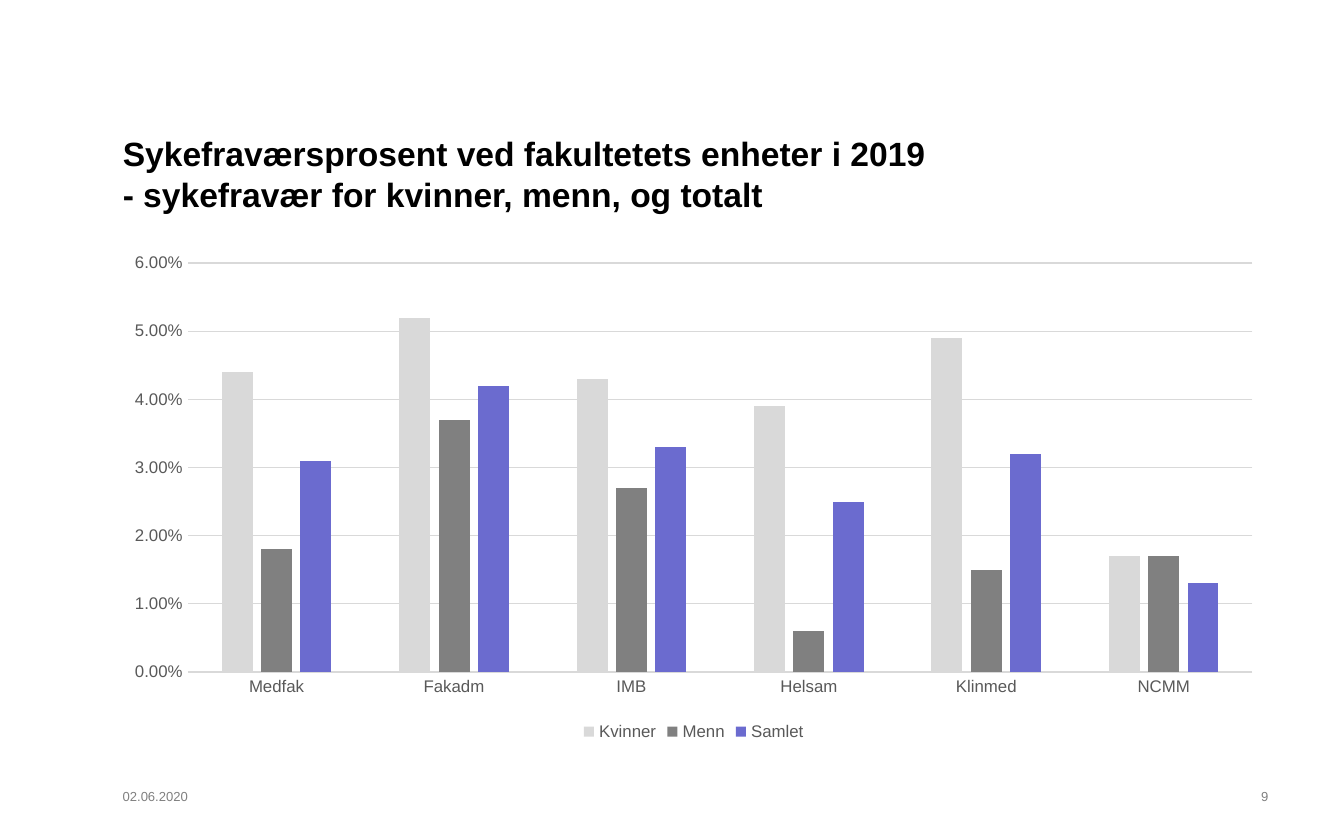
from pptx import Presentation
from pptx.chart.data import CategoryChartData
from pptx.dml.color import RGBColor
from pptx.enum import chart as ch, text
from pptx.util import Cm, Pt

FONT = "Arial"
COLORS = {
    "title": "000000",
    "footer": "808080",
    "label": "595959",
    "grid": "D9D9D9",
    "Kvinner": "D9D9D9",
    "Menn": "808080",
    "Samlet": "6B6BCF",
}
UNITS = ["Medfak", "Fakadm", "IMB", "Helsam", "Klinmed", "NCMM"]
ABSENCE = {
    "Kvinner": [0.044, 0.052, 0.043, 0.039, 0.049, 0.017],
    "Menn": [0.018, 0.037, 0.027, 0.006, 0.015, 0.017],
    "Samlet": [0.031, 0.042, 0.033, 0.025, 0.032, 0.013],
}


def color(name):
    return RGBColor.from_string(COLORS[name])


def style(font, size, color_name, bold=False):
    font.name = FONT
    font.size = Pt(size)
    font.bold = bold
    font.color.rgb = color(color_name)


def fill_frame(frame, words, size, color_name, align, anchor, bold=False):
    frame.text = words
    frame.word_wrap = True
    frame.auto_size = text.MSO_AUTO_SIZE.NONE
    frame.vertical_anchor = anchor
    frame.margin_left = frame.margin_right = Cm(0.21)
    frame.margin_top = frame.margin_bottom = Cm(0.1)
    paragraph = frame.paragraphs[0]
    paragraph.alignment = align
    for run in paragraph.runs:
        style(run.font, size, color_name, bold)


def add_heading(slide, left, top, width, height):
    heading = slide.shapes.title
    heading.left, heading.top = Cm(left), Cm(top)
    heading.width, heading.height = Cm(width), Cm(height)
    fill_frame(
        heading.text_frame,
        "Sykefraværsprosent ved fakultetets enheter i 2019\v"
        "- sykefravær for kvinner, menn, og totalt",
        18, "title", text.PP_ALIGN.LEFT, text.MSO_ANCHOR.MIDDLE, True)


def add_absence_chart(slide, left, top, width, height):
    absence = CategoryChartData(number_format="0.00%")
    absence.categories = UNITS
    for group, rates in ABSENCE.items():
        absence.add_series(group, rates)
    chart = slide.shapes.add_chart(
        ch.XL_CHART_TYPE.COLUMN_CLUSTERED,
        Cm(left), Cm(top), Cm(width), Cm(height), absence).chart
    style(chart.font, 10, "title")
    chart.has_title = False

    chart.has_legend = True
    chart.legend.position = ch.XL_LEGEND_POSITION.BOTTOM
    chart.legend.include_in_layout = False
    style(chart.legend.font, 9, "label")

    bars = chart.plots[0]
    bars.gap_width = 219
    bars.overlap = -27
    bars.vary_by_categories = False
    for series in bars.series:
        series.invert_if_negative = False
        series.format.fill.solid()
        series.format.fill.fore_color.rgb = color(series.name)

    units, rates = chart.category_axis, chart.value_axis
    for axis in (units, rates):
        axis.major_tick_mark = axis.minor_tick_mark = ch.XL_TICK_MARK.NONE
        style(axis.tick_labels.font, 9, "label")
    rates.minimum_scale, rates.maximum_scale, rates.major_unit = 0, 0.06, 0.01
    rates.tick_labels.number_format = "0.00%"
    rates.tick_labels.number_format_is_linked = False
    rates.format.line.fill.background()
    rates.has_major_gridlines = True
    for line in (units.format.line, rates.major_gridlines.format.line):
        line.color.rgb = color("grid")
        line.width = Pt(0.75)


def add_footer(slide, left, top, width, height):
    parts = [
        ("02.06.2020", 0, 5.28, text.PP_ALIGN.LEFT),
        ("9", width - 1.9, 1.9, text.PP_ALIGN.RIGHT),
    ]
    for words, offset, part_width, align in parts:
        part = slide.shapes.add_textbox(
            Cm(left + offset), Cm(top), Cm(part_width), Cm(height))
        fill_frame(part.text_frame, words, 7, "footer", align,
                   text.MSO_ANCHOR.TOP)


def main():
    deck = Presentation()
    deck.slide_width, deck.slide_height = Cm(25.4), Cm(15.88)
    slide = deck.slides.add_slide(deck.slide_layouts[5])
    left, width = 2.11, 22
    add_heading(slide, left, 1.96, width, 2.64)
    add_absence_chart(slide, left, 4.6, width, 9.52)
    add_footer(slide, left, 14.81, width + 0.07, 1.07)
    deck.save("out.pptx")


if __name__ == "__main__":
    main()
